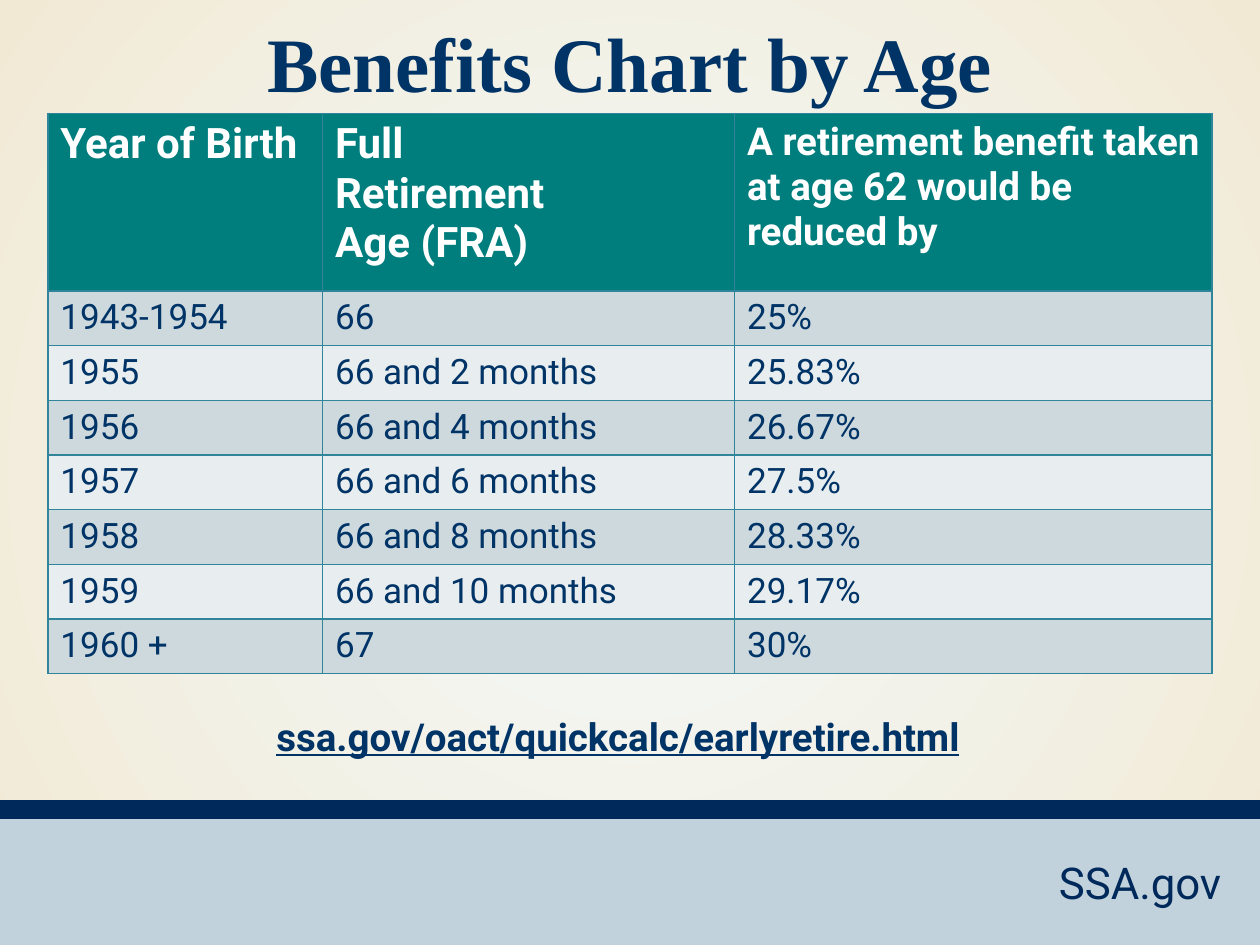
from dataclasses import dataclass

from lxml.etree import SubElement
from pptx import Presentation
from pptx.dml.color import RGBColor
from pptx.enum.shapes import MSO_SHAPE
from pptx.enum.text import MSO_ANCHOR, PP_ALIGN
from pptx.oxml import parse_xml
from pptx.oxml.ns import nsdecls, qn
from pptx.util import Inches, Pt


@dataclass(frozen=True)
class Theme:
    """Colours, fonts and type sizes of the slide."""

    glow: str = "F3FAFB"
    sand: str = "F2E9D5"
    footer: str = "C1D2DC"
    stripe: str = "00295B"
    ink: str = "003366"
    header: str = "007D7D"
    header_text: str = "FFFFFF"
    bands: tuple = ("CED9DE", "E8EDEF")
    border: str = "31859B"
    border_width: int = Pt(1)
    title_font: str = "Times New Roman"
    body_font: str = "Roboto"
    title_size: int = 44
    site_size: int = 25
    header_sizes: tuple = (24, 24, 22)
    link_size: int = 22
    cell_size: int = 20


class SlideBuilder:
    """Adds styled elements to the current slide."""

    def __init__(self, slide, theme):
        """Keep the slide and its theme."""
        self.slide = slide
        self.theme = theme

    def set_text(self, text_frame, text, alignment=PP_ALIGN.LEFT, **font_format):
        """Fill a text frame and format every paragraph."""
        values = {"name": self.theme.body_font, "bold": False} | font_format
        color = values.pop("color", self.theme.ink)
        values["size"] = Pt(values["size"])
        text_frame.word_wrap = True
        text_frame.text = text
        for paragraph in text_frame.paragraphs:
            paragraph.alignment = alignment
            for run in paragraph.runs:
                for name, value in values.items():
                    setattr(run.font, name, value)
                run.font.color.rgb = RGBColor.from_string(color)

    def background(self):
        """Set a circular gradient from the centre outwards."""
        fill = self.slide.background.fill
        fill.gradient()
        for stop, color in zip(fill.gradient_stops, (self.theme.glow, self.theme.sand)):
            stop.color.rgb = RGBColor.from_string(color)
        gradient = self.slide.element.find(".//" + qn("a:gradFill"))
        gradient.replace(gradient.find(qn("a:lin")), parse_xml(
            f'<a:path {nsdecls("a")} path="circle">'
            '<a:fillToRect l="50000" t="50000" r="50000" b="50000"/></a:path>'))

    def title(self, text, left, top, width, height):
        """Place and format the title placeholder."""
        shape = self.slide.shapes.title
        geometry = {"left": left, "top": top, "width": width, "height": height}
        for name, value in geometry.items():
            setattr(shape, name, Inches(value))
        shape.text_frame.vertical_anchor = MSO_ANCHOR.TOP
        shape.text_frame.margin_top = Inches(0.12)
        self.set_text(shape.text_frame, text, PP_ALIGN.CENTER, bold=True,
                      name=self.theme.title_font, size=self.theme.title_size)

    def band(self, color, *bounds):
        """Add a plain rectangle."""
        shape = self.slide.shapes.add_shape(MSO_SHAPE.RECTANGLE, *map(Inches, bounds))
        shape.shadow.inherit = False
        shape.fill.solid()
        shape.fill.fore_color.rgb = RGBColor.from_string(color)
        shape.line.fill.background()

    def text(self, text, bounds, alignment, **font_format):
        """Add a text box."""
        shape = self.slide.shapes.add_textbox(*map(Inches, bounds))
        self.set_text(shape.text_frame, text, alignment, **font_format)

    def cell(self, cell, text, fill, **font_format):
        """Fill, border and label one table cell."""
        cell.fill.solid()
        cell.fill.fore_color.rgb = RGBColor.from_string(fill)
        properties = cell._tc.get_or_add_tcPr()
        for position, side in enumerate(("lnL", "lnR", "lnT", "lnB")):
            line = SubElement(properties, qn(f"a:{side}"), w=str(self.theme.border_width))
            solid = SubElement(line, qn("a:solidFill"))
            SubElement(solid, qn("a:srgbClr"), val=self.theme.border)
            properties.insert(position, line)
        self.set_text(cell.text_frame, text, **font_format)

    def table(self, header, rows, left, top, widths, heights):
        """Add a table with a header and alternating row fills."""
        theme = self.theme
        bounds = map(Inches, (left, top, sum(widths), sum(heights)))
        table = self.slide.shapes.add_table(len(heights), len(widths), *bounds).table
        table.horz_banding = False
        for column, width in zip(table.columns, widths):
            column.width = Inches(width)
        for row, height in zip(table.rows, heights):
            row.height = Inches(height)
        for column, text in enumerate(header):
            self.cell(table.cell(0, column), text, theme.header, bold=True,
                      color=theme.header_text, size=theme.header_sizes[column])
        for index, values in enumerate(rows):
            for column, text in enumerate(values):
                self.cell(table.cell(index + 1, column), text,
                          theme.bands[index % 2], size=theme.cell_size)


def main():
    """Build the benefits slide."""
    header = (
        "Year of Birth",
        "Full\nRetirement\nAge (FRA)",
        "A retirement benefit taken at age 62 would be reduced by",
    )
    benefits = (
        ("1943-1954", "66", "25%"),
        ("1955", "66 and 2 months", "25.83%"),
        ("1956", "66 and 4 months", "26.67%"),
        ("1957", "66 and 6 months", "27.5%"),
        ("1958", "66 and 8 months", "28.33%"),
        ("1959", "66 and 10 months", "29.17%"),
        ("1960 +", "67", "30%"),
    )
    theme = Theme()
    presentation = Presentation()
    presentation.slide_width = Inches(10)
    presentation.slide_height = Inches(7.5)
    slide = presentation.slides.add_slide(presentation.slide_layouts.get_by_name("Title Only"))
    builder = SlideBuilder(slide, theme)

    builder.background()
    builder.band(theme.footer, 0, 6.45, 10, 1.05)
    builder.band(theme.stripe, 0, 6.35, 10, 0.15)
    builder.text("SSA.gov", (6.72, 6.74, 3.07, 0.52), PP_ALIGN.RIGHT,
                 size=theme.site_size, color=theme.stripe)
    builder.title("Benefits Chart by Age", 0, 0, 10, 1.45)
    builder.table(header, benefits, 0.38, 0.9, (2.18, 3.27, 3.79),
                  (1.41, *[0.43] * len(benefits)))
    builder.text("ssa.gov/oact/quickcalc/earlyretire.html", (1.19, 5.61, 7.43, 0.47),
                 PP_ALIGN.CENTER, size=theme.link_size, bold=True, underline=True)
    presentation.save("out.pptx")


if __name__ == "__main__":
    main()
